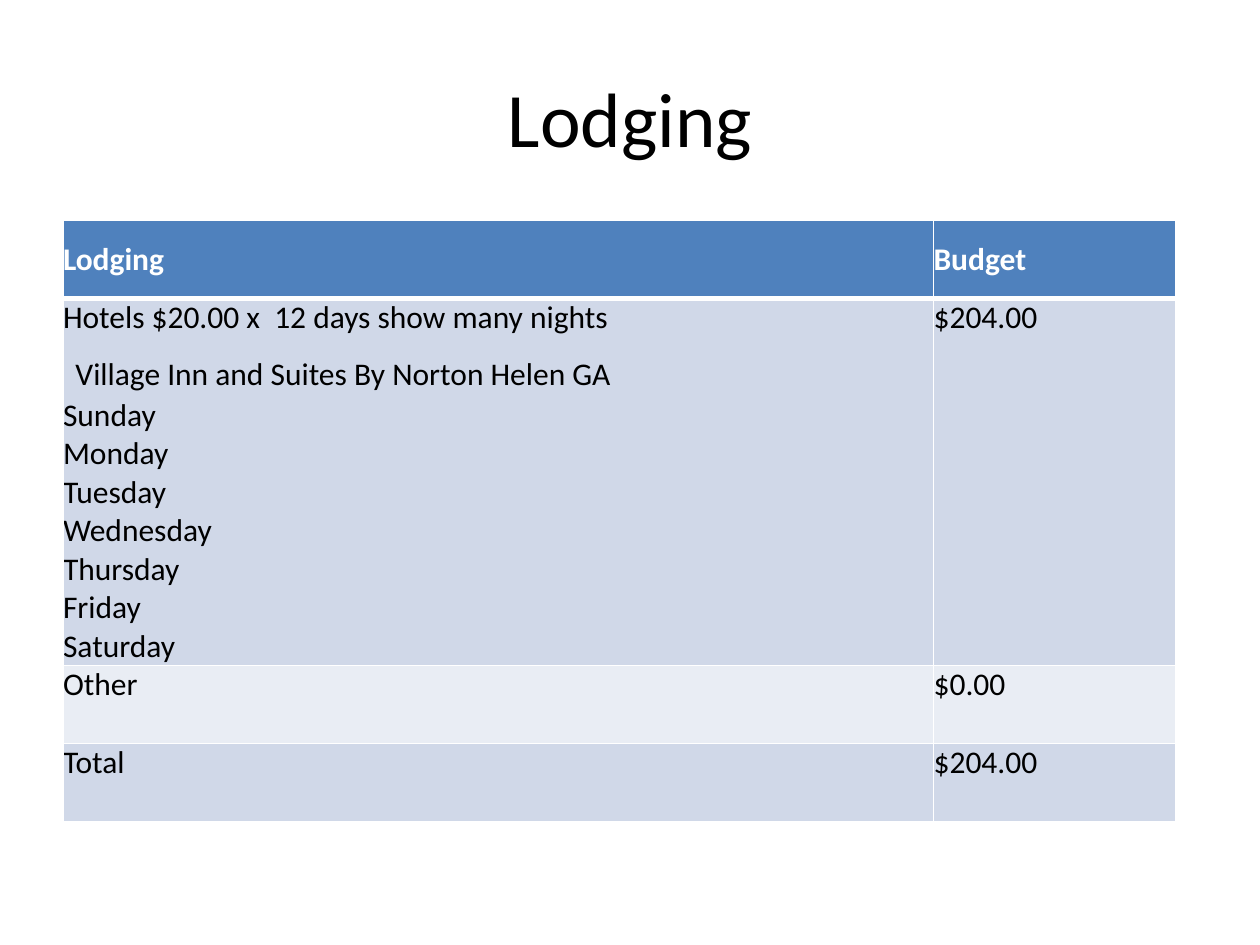
from dataclasses import dataclass

from lxml.etree import SubElement
from pptx import Presentation
from pptx.dml.color import RGBColor
from pptx.enum.text import MSO_ANCHOR as Anchor, PP_ALIGN as Align
from pptx.oxml.ns import qn
from pptx.util import Inches, Pt

COLORS = {
    "text": "000000",
    "header": "4F81BD",
    "odd_row": "D0D8E8",
    "even_row": "E9EDF4",
    "white": "FFFFFF",
}
DAYS = ["Sunday", "Monday", "Tuesday", "Wednesday", "Thursday", "Friday", "Saturday"]
COLUMN_WIDTHS = [6.91, 1.92]


@dataclass
class BudgetRow:
    items: list[str]
    amount: str
    height: float = 0.62
    fill: str = "odd_row"
    color: str = "text"
    bold: bool = False
    anchor: Anchor = Anchor.TOP
    bottom_border: float = 1


ROWS = [
    BudgetRow(["Lodging"], "Budget", fill="header", color="white", bold=True,
              anchor=Anchor.MIDDLE, bottom_border=3),
    BudgetRow(["Hotels $20.00 x  12 days show many nights", *DAYS], "$204.00", height=2.91),
    BudgetRow(["Other"], "$0.00", fill="even_row"),
    BudgetRow(["Total"], "$204.00"),
]


def rgb(name: str) -> RGBColor:
    return RGBColor.from_string(COLORS[name])


def write_lines(text_frame, lines: list[str], size: float = 18,
                color: str = "text", bold: bool = False) -> None:
    text_frame.text = "\n".join(lines)
    font_format = {"name": "Calibri", "size": Pt(size), "bold": bold}
    for paragraph in text_frame.paragraphs:
        for run in paragraph.runs:
            for attribute, value in font_format.items():
                setattr(run.font, attribute, value)
            run.font.color.rgb = rgb(color)


def add_borders(cell, widths: dict[str, float]) -> None:
    """Draw white cell edges; call before setting the fill, which must follow them."""
    properties = cell._tc.get_or_add_tcPr()
    for edge, width in widths.items():
        line = SubElement(properties, qn(f"a:ln{edge}"), w=str(Pt(width)))
        fill = SubElement(line, qn("a:solidFill"))
        SubElement(fill, qn("a:srgbClr"), val=COLORS["white"])


def fill_cell(cell, lines: list[str], row: BudgetRow, top_border: float) -> None:
    add_borders(cell, {"L": 1, "R": 1, "T": top_border, "B": row.bottom_border})
    cell.fill.solid()
    cell.fill.fore_color.rgb = rgb(row.fill)
    cell_format = {"margin_left": 0, "margin_right": 0, "margin_top": 0,
                   "margin_bottom": 0, "vertical_anchor": row.anchor}
    for attribute, value in cell_format.items():
        setattr(cell, attribute, value)
    write_lines(cell.text_frame, lines, color=row.color, bold=row.bold)


def add_title(slide, text: str) -> None:
    title = slide.shapes.title
    place = {"left": 0.5, "top": 0.3, "width": 9, "height": 1.25}
    for attribute, value in place.items():
        setattr(title, attribute, Inches(value))
    title.text_frame.vertical_anchor = Anchor.MIDDLE
    write_lines(title.text_frame, [text], size=44)
    title.text_frame.paragraphs[0].alignment = Align.CENTER


def add_budget_table(slide) -> None:
    height = sum(row.height for row in ROWS)
    table = slide.shapes.add_table(
        len(ROWS), len(COLUMN_WIDTHS), Inches(0.5), Inches(1.75),
        Inches(sum(COLUMN_WIDTHS)), Inches(height)).table
    for column, width in zip(table.columns, COLUMN_WIDTHS):
        column.width = Inches(width)
    top_border = 1
    for index, row in enumerate(ROWS):
        table.rows[index].height = Inches(row.height)
        for column, lines in enumerate([row.items, [row.amount]]):
            fill_cell(table.cell(index, column), lines, row, top_border)
        top_border = row.bottom_border
    # Room between the hotel line and the days for the hotel name
    table.cell(1, 0).text_frame.paragraphs[1].space_before = Pt(34)


def add_hotel_name(slide, name: str) -> None:
    box = slide.shapes.add_textbox(Inches(0.5), Inches(2.76), Inches(4.75), Inches(0.4))
    box.text_frame.word_wrap = False
    write_lines(box.text_frame, [name])
    box.text_frame.paragraphs[0].alignment = Align.LEFT


def main() -> None:
    presentation = Presentation()
    presentation.slide_width = Inches(10)
    presentation.slide_height = Inches(7.5)
    slide = presentation.slides.add_slide(presentation.slide_layouts.get_by_name("Title Only"))
    add_title(slide, "Lodging")
    add_budget_table(slide)
    add_hotel_name(slide, "Village Inn and Suites By Norton Helen GA")
    presentation.save("out.pptx")


if __name__ == "__main__":
    main()
